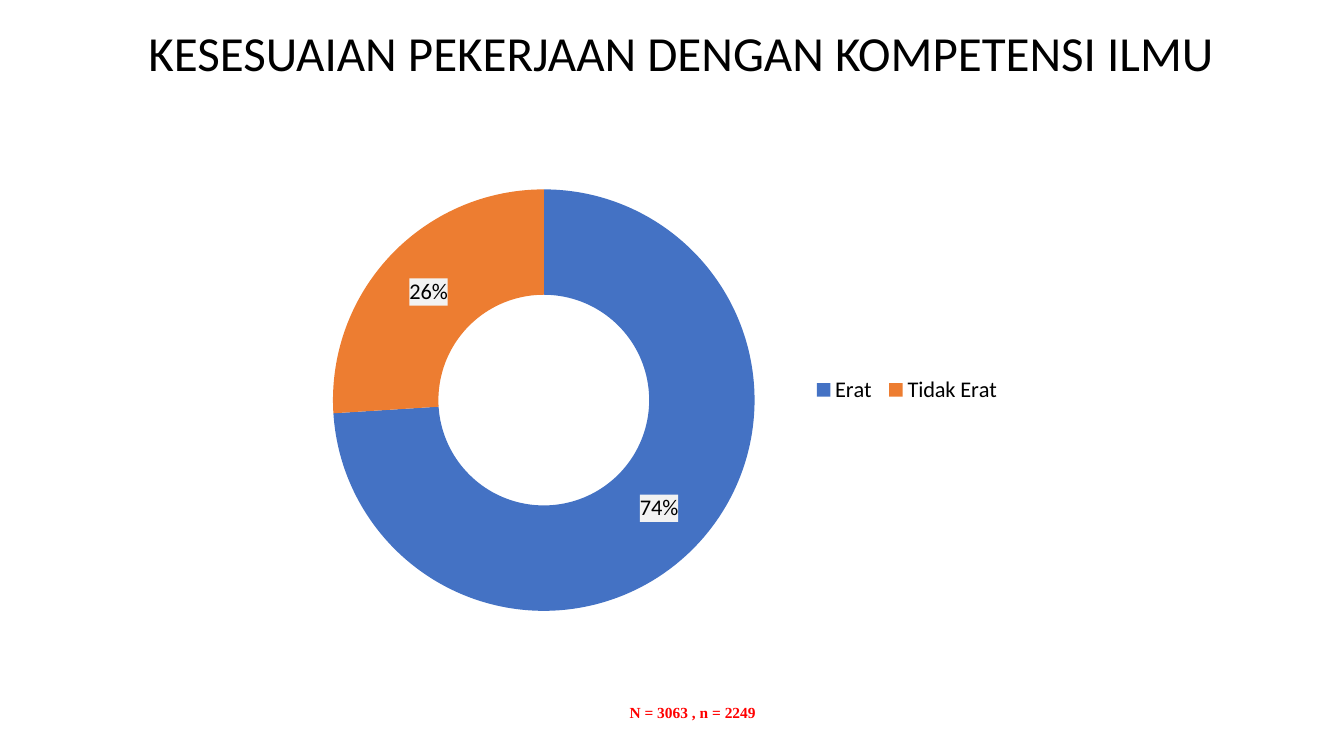
import pptx
import pptx.chart.data
import pptx.dml.color
import pptx.enum.chart
import pptx.enum.text
import pptx.oxml
import pptx.oxml.ns
import pptx.util

Inches = pptx.util.Inches
Pt = pptx.util.Pt


def color(code):
    return pptx.dml.color.RGBColor.from_string(code)


def style(font, size, face, tint="000000", bold=False):
    font.size, font.name, font.bold = Pt(size), face, bold
    font.color.rgb = color(tint)


def write(frame, text, spacing=None, **font):
    line = frame.paragraphs[0]
    line.alignment = pptx.enum.text.PP_ALIGN.CENTER
    line.line_spacing = spacing
    run = line.add_run()
    run.text = text
    style(run.font, **font)


def layout(x, y, wide, high, inner=False):
    """Return a manual chart layout; lengths are shares of the chart."""
    target = '<c:layoutTarget val="inner"/>' if inner else ""
    return pptx.oxml.parse_xml(
        f'<c:layout {pptx.oxml.ns.nsdecls("c")}><c:manualLayout>{target}'
        '<c:xMode val="edge"/><c:yMode val="edge"/>'
        f'<c:x val="{x}"/><c:y val="{y}"/><c:w val="{wide}"/><c:h val="{high}"/>'
        '</c:manualLayout></c:layout>')


class Deck:
    face = "Calibri"
    left, width = Inches(0.55), Inches(12.42)

    def __init__(self):
        self.show = pptx.Presentation()
        self.show.slide_width = Inches(13.33)
        self.show.slide_height = Inches(7.5)
        self.slide = self.show.slides.add_slide(self.show.slide_layouts[6])

    def title(self, text):
        box = self.slide.shapes.add_textbox(
            self.left, Inches(0.1), self.width, Inches(0.9))
        frame = box.text_frame
        frame.word_wrap = True
        frame.vertical_anchor = pptx.enum.text.MSO_ANCHOR.MIDDLE
        write(frame, text, spacing=0.9, size=35, face=self.face)

    def ring(self, parts):
        """Add a doughnut chart from (name, value, colour) parts."""
        names, values, tints = zip(*parts)
        data = pptx.chart.data.CategoryChartData()
        data.categories = names
        data.add_series("Series 1", values)
        chart = self.slide.shapes.add_chart(
            pptx.enum.chart.XL_CHART_TYPE.DOUGHNUT,
            self.left, Inches(1.42), self.width, Inches(5.1), data).chart
        chart.has_title = False
        style(chart.font, 16, self.face)
        plot = chart.plots[0]
        plot.vary_by_categories = True
        series = plot.series[0]
        for index, tint in enumerate(tints):
            fill = series.points[index].format.fill
            fill.solid()
            fill.fore_color.rgb = color(tint)
        self.label(series.data_labels)
        area = chart.plots[0]._element.getparent()
        for old in area.findall(pptx.oxml.ns.qn("c:layout")):
            area.remove(old)
        area.insert(0, layout(0.22, 0.09, 0.34, 0.82, inner=True))
        self.legend(chart)

    def label(self, labels):
        labels.show_percentage, labels.show_value = True, False
        labels.number_format = "0%"
        labels.number_format_is_linked = False
        style(labels.font, 16, self.face)
        fill = pptx.oxml.parse_xml(
            f'<c:spPr {pptx.oxml.ns.nsdecls("c", "a")}><a:solidFill>'
            '<a:srgbClr val="F2F2F2"/></a:solidFill></c:spPr>')
        labels._element.find(pptx.oxml.ns.qn("c:numFmt")).addnext(fill)

    def legend(self, chart):
        chart.has_legend = True
        legend = chart.legend
        legend.position = pptx.enum.chart.XL_LEGEND_POSITION.RIGHT
        legend.include_in_layout = False
        style(legend.font, 16, self.face)
        for old in legend._element.findall(pptx.oxml.ns.qn("c:layout")):
            legend._element.remove(old)
        place = legend._element.find(pptx.oxml.ns.qn("c:legendPos"))
        place.addnext(layout(0.6, 0.44, 0.16, 0.08))

    def count(self, text):
        """Add the sample size as a one-cell table."""
        table = self.slide.shapes.add_table(
            1, 1, Inches(6.07), Inches(6.94), Inches(1.6), Inches(0.33)).table
        table.first_row = table.horz_banding = False
        cell = table.cell(0, 0)
        cell.fill.background()
        write(cell.text_frame, text, size=11, face="Times New Roman",
              tint="FF0000", bold=True)
        edges = cell._tc.get_or_add_tcPr()
        for spot, side in enumerate("LRTB"):
            edges.insert(spot, pptx.oxml.parse_xml(
                f'<a:ln{side} {pptx.oxml.ns.nsdecls("a")}><a:noFill/></a:ln{side}>'))


def main():
    deck = Deck()
    deck.title("KESESUAIAN PEKERJAAN DENGAN KOMPETENSI ILMU")
    deck.ring([("Erat", 74, "4472C4"), ("Tidak Erat", 26, "ED7D31")])
    deck.count("N = 3063 , n = 2249")
    deck.show.save("out.pptx")


if __name__ == "__main__":
    main()
